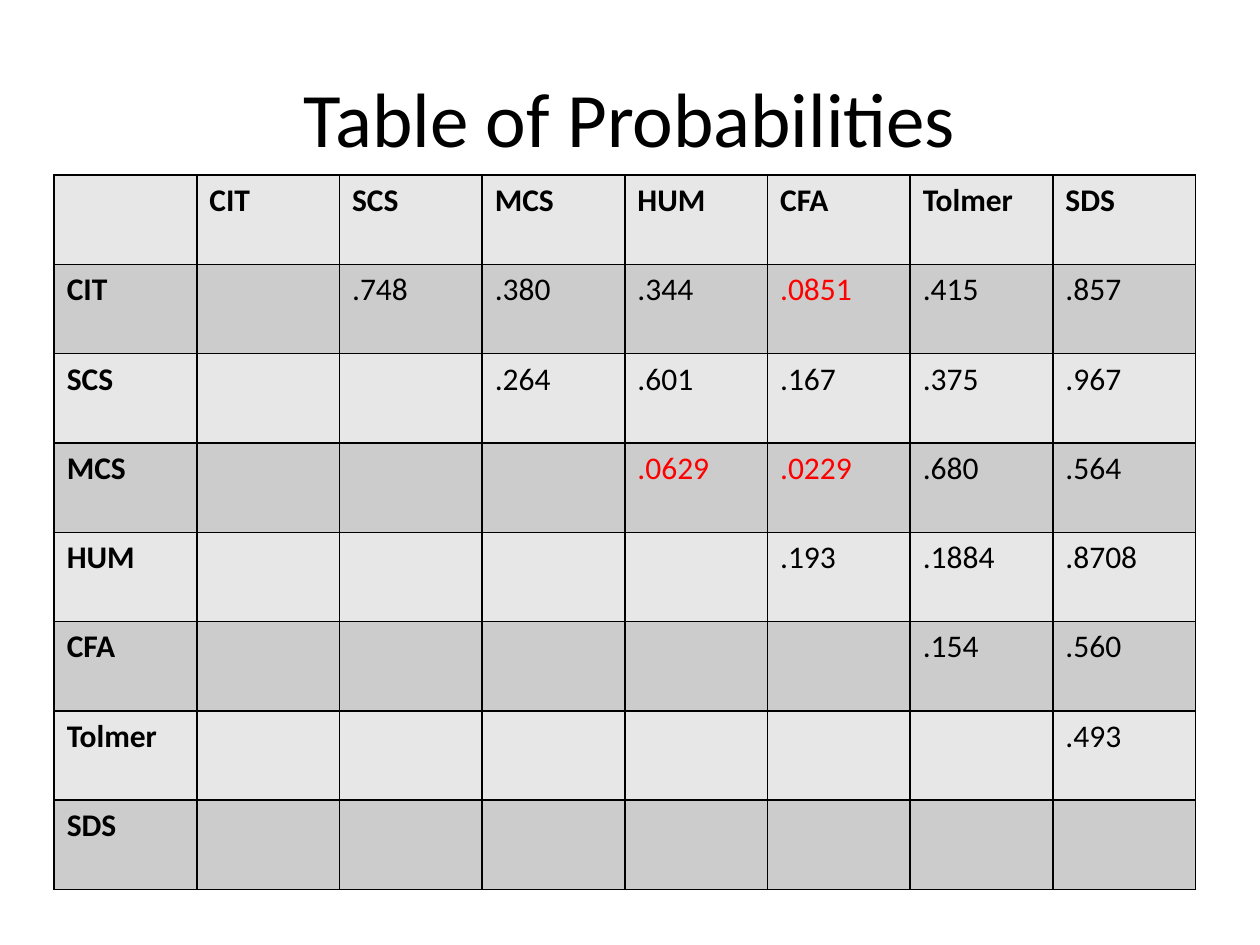
from dataclasses import dataclass

from lxml import etree
from pptx import Presentation
from pptx.dml.color import RGBColor
from pptx.enum.text import MSO_ANCHOR, PP_ALIGN
from pptx.oxml.ns import qn
from pptx.util import Pt

MIDDLE = MSO_ANCHOR.MIDDLE
CENTER = PP_ALIGN.CENTER
TITLE_ONLY = 5


@dataclass(frozen=True)
class Theme:
    font: str = "Calibri"
    head: float = 44
    body: float = 18
    ink: str = "000000"
    alert: str = "FF0000"
    light: str = "E7E7E7"
    dark: str = "CCCCCC"
    rule: float = 1


@dataclass(frozen=True)
class Entry:
    text: str
    fill: str
    color: str
    bold: bool = False


THEME = Theme()
LIMIT = 0.1  # probabilities below this are shown in the alert colour
COL, ROW = 81.54, 51.03

SCHOOLS = ["CIT", "SCS", "MCS", "HUM", "CFA", "Tolmer", "SDS"]
# Upper triangle: each row ends at the last column
PROBS = [
    [".748", ".380", ".344", ".0851", ".415", ".857"],
    [".264", ".601", ".167", ".375", ".967"],
    [".0629", ".0229", ".680", ".564"],
    [".193", ".1884", ".8708"],
    [".154", ".560"],
    [".493"],
    [],
]


def add_run(para, text: str, size: float, color: str, bold: bool = False) -> None:
    run = para.add_run()
    run.text = text
    font = run.font
    font.name, font.size, font.bold = THEME.font, Pt(size), bold
    font.color.rgb = RGBColor.from_string(color)


def add_edges(cell) -> None:
    props = cell._tc.get_or_add_tcPr()
    for spot, side in enumerate(("lnL", "lnR", "lnT", "lnB")):
        line = etree.Element(qn(f"a:{side}"), w=str(Pt(THEME.rule)))
        fill = etree.SubElement(line, qn("a:solidFill"))
        etree.SubElement(fill, qn("a:srgbClr"), val=THEME.ink)
        props.insert(spot, line)


def draw_cell(cell, entry: Entry) -> None:
    cell.fill.solid()
    cell.fill.fore_color.rgb = RGBColor.from_string(entry.fill)
    add_edges(cell)
    if entry.text:
        add_run(cell.text_frame.paragraphs[0], entry.text, THEME.body,
                entry.color, entry.bold)


def make_entry(row: int, col: int, text: str) -> Entry:
    fill = THEME.dark if row % 2 else THEME.light
    label = row == 0 or col == 0
    low = bool(text) and not label and float(text) < LIMIT
    return Entry(text, fill, THEME.alert if low else THEME.ink, label)


def draw_title(slide, text: str) -> None:
    title = slide.shapes.title
    title.left, title.top = Pt(36), Pt(21.6)
    title.width, title.height = Pt(648), Pt(90)
    frame = title.text_frame
    frame.vertical_anchor = MIDDLE
    para = frame.paragraphs[0]
    para.alignment = CENTER
    add_run(para, text, THEME.head, THEME.ink)


def draw_table(slide) -> None:
    size = len(SCHOOLS) + 1
    grid = [["", *SCHOOLS]]
    for name, probs in zip(SCHOOLS, PROBS):
        blanks = [""] * (size - 1 - len(probs))
        grid.append([name, *blanks, *probs])

    table = slide.shapes.add_table(
        size, size, Pt(30.96), Pt(100.08), Pt(COL * size), Pt(ROW * size)
    ).table
    for col in table.columns:
        col.width = Pt(COL)
    for row in table.rows:
        row.height = Pt(ROW)
    for r, line in enumerate(grid):
        for c, text in enumerate(line):
            draw_cell(table.cell(r, c), make_entry(r, c, text))


def main() -> None:
    deck = Presentation()
    deck.slide_width, deck.slide_height = Pt(720), Pt(540)
    slide = deck.slides.add_slide(deck.slide_layouts[TITLE_ONLY])

    # Heading
    draw_title(slide, "Table of Probabilities")
    # Pairwise probabilities
    draw_table(slide)

    deck.save("out.pptx")


if __name__ == "__main__":
    main()
